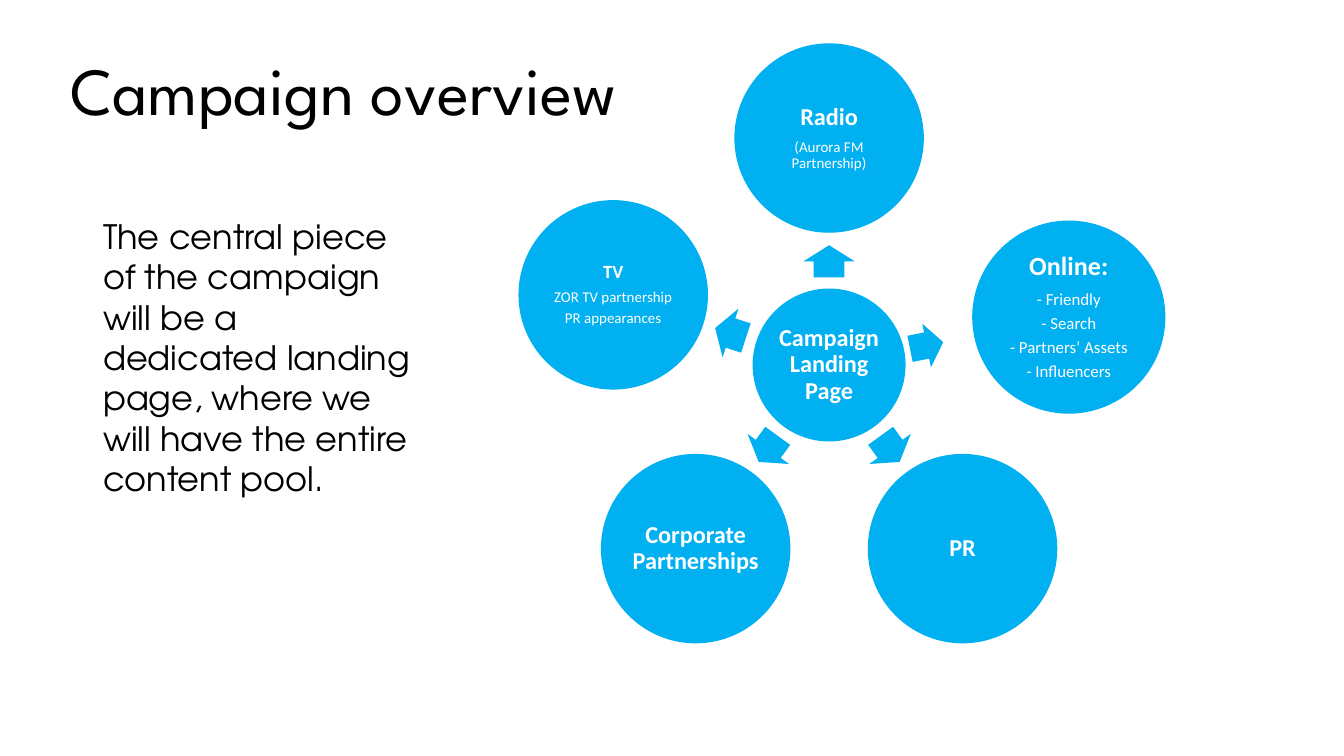
from dataclasses import dataclass
from math import cos, radians, sin

from pptx import Presentation
from pptx.dml.color import RGBColor
from pptx.enum.shapes import MSO_SHAPE
from pptx.enum.text import MSO_ANCHOR, MSO_AUTO_SIZE, PP_ALIGN
from pptx.util import Cm, Pt

OVAL = MSO_SHAPE.OVAL
ARROW = MSO_SHAPE.RIGHT_ARROW
TOP, MIDDLE = MSO_ANCHOR.TOP, MSO_ANCHOR.MIDDLE
LEFT, CENTER = PP_ALIGN.LEFT, PP_ALIGN.CENTER
FIT_SHAPE = MSO_AUTO_SIZE.SHAPE_TO_FIT_TEXT
TITLE_ONLY = 5


@dataclass(frozen=True)
class Theme:
    blue: RGBColor = RGBColor(0x00, 0xB0, 0xF0)
    white: RGBColor = RGBColor(0xFF, 0xFF, 0xFF)
    black: RGBColor = RGBColor(0x00, 0x00, 0x00)
    title_font: str = "League Spartan"
    body_font: str = "TeX Gyre Adventor"
    circle_font: str = "Calibri"
    title_size: int = 36
    body_size: int = 18
    heading_size: int = 13
    detail_size: int = 8


@dataclass(frozen=True)
class Channel:
    angle: float
    heading: str
    details: tuple = ()
    heading_size: int = 13
    detail_size: int = 8
    diameter: float = 3.51
    distance: float = 4.29
    arrow_distance: float = 1.96
    arrow_size: tuple = (0.61, 0.97)


THEME = Theme()
HUB_CENTER = (15.67, 6.9)
HUB_DIAMETER = 2.82
CHANNELS = (
    Channel(270, "Radio", ("(Aurora FM Partnership)",)),
    Channel(348.7, "Online:",
            ("- Friendly", "- Search", "- Partners’ Assets", "- Influencers"),
            heading_size=14, detail_size=9, diameter=3.58, distance=4.62,
            arrow_distance=1.88, arrow_size=(0.64, 0.84)),
    Channel(54, "PR"),
    Channel(126, "Corporate Partnerships"),
    Channel(198, "TV", ("ZOR TV partnership", "PR appearances"), heading_size=10),
)


def style_font(paragraph, name, size, color, bold=False):
    paragraph.font.name = name
    paragraph.font.size = Pt(size)
    paragraph.font.color.rgb = color
    paragraph.font.bold = bold


def polar_point(angle, distance):
    x, y = HUB_CENTER
    return (x + distance * cos(radians(angle)), y + distance * sin(radians(angle)))


def add_blue_shape(slide, kind, center, width, height):
    x, y = center
    shape = slide.shapes.add_shape(
        kind, Cm(x - width / 2), Cm(y - height / 2), Cm(width), Cm(height))
    shape.shadow.inherit = False
    shape.fill.solid()
    shape.fill.fore_color.rgb = THEME.blue
    return shape


def add_circle(slide, center, diameter, lines):
    circle = add_blue_shape(slide, OVAL, center, diameter, diameter)
    circle.line.color.rgb = THEME.blue
    circle.line.width = Pt(2)
    frame = circle.text_frame
    frame.word_wrap = True
    frame.vertical_anchor = MIDDLE
    frame.margin_left = frame.margin_right = Cm(0.05)
    frame.margin_top = frame.margin_bottom = Cm(0.05)
    for index, (text, size, bold) in enumerate(lines):
        paragraph = frame.add_paragraph() if index else frame.paragraphs[0]
        paragraph.text = text
        paragraph.alignment = CENTER
        paragraph.line_spacing = 0.9
        paragraph.space_after = Pt(size * 0.35)
        style_font(paragraph, THEME.circle_font, size, THEME.white, bold)


def add_arrow(slide, center, size, angle):
    arrow = add_blue_shape(slide, ARROW, center, *size)
    arrow.line.fill.background()
    arrow.adjustments[0] = 0.6
    arrow.adjustments[1] = 0.5
    arrow.rotation = angle


def add_channel(slide, channel):
    add_arrow(slide, polar_point(channel.angle, channel.arrow_distance),
              channel.arrow_size, channel.angle)
    lines = [(channel.heading, channel.heading_size, True)]
    lines += [(detail, channel.detail_size, False) for detail in channel.details]
    add_circle(slide, polar_point(channel.angle, channel.distance),
               channel.diameter, lines)


def fill_text(box, text, font, size):
    frame = box.text_frame
    frame.word_wrap = True
    frame.auto_size = FIT_SHAPE
    frame.vertical_anchor = TOP
    paragraph = frame.paragraphs[0]
    paragraph.text = text
    paragraph.alignment = LEFT
    style_font(paragraph, font, size, THEME.black)


def set_title(slide, text):
    title = slide.shapes.title
    title.left, title.top = Cm(1.07), Cm(0.79)
    title.width, title.height = Cm(13.13), Cm(1.8)
    fill_text(title, text, THEME.title_font, THEME.title_size)


def add_body(slide, text):
    box = slide.shapes.add_textbox(Cm(1.7), Cm(3.96), Cm(6.35), Cm(4.88))
    fill_text(box, text, THEME.body_font, THEME.body_size)


def main():
    deck = Presentation()
    deck.slide_width, deck.slide_height = Cm(25.4), Cm(14.29)
    slide = deck.slides.add_slide(deck.slide_layouts[TITLE_ONLY])
    set_title(slide, "Campaign overview")
    add_circle(slide, HUB_CENTER, HUB_DIAMETER,
               [("Campaign Landing Page", THEME.heading_size, True)])
    for channel in CHANNELS:
        add_channel(slide, channel)
    add_body(slide, "The central piece of the campaign will be a dedicated "
                    "landing page, where we will have the entire content pool.")
    deck.save("out.pptx")


if __name__ == "__main__":
    main()
